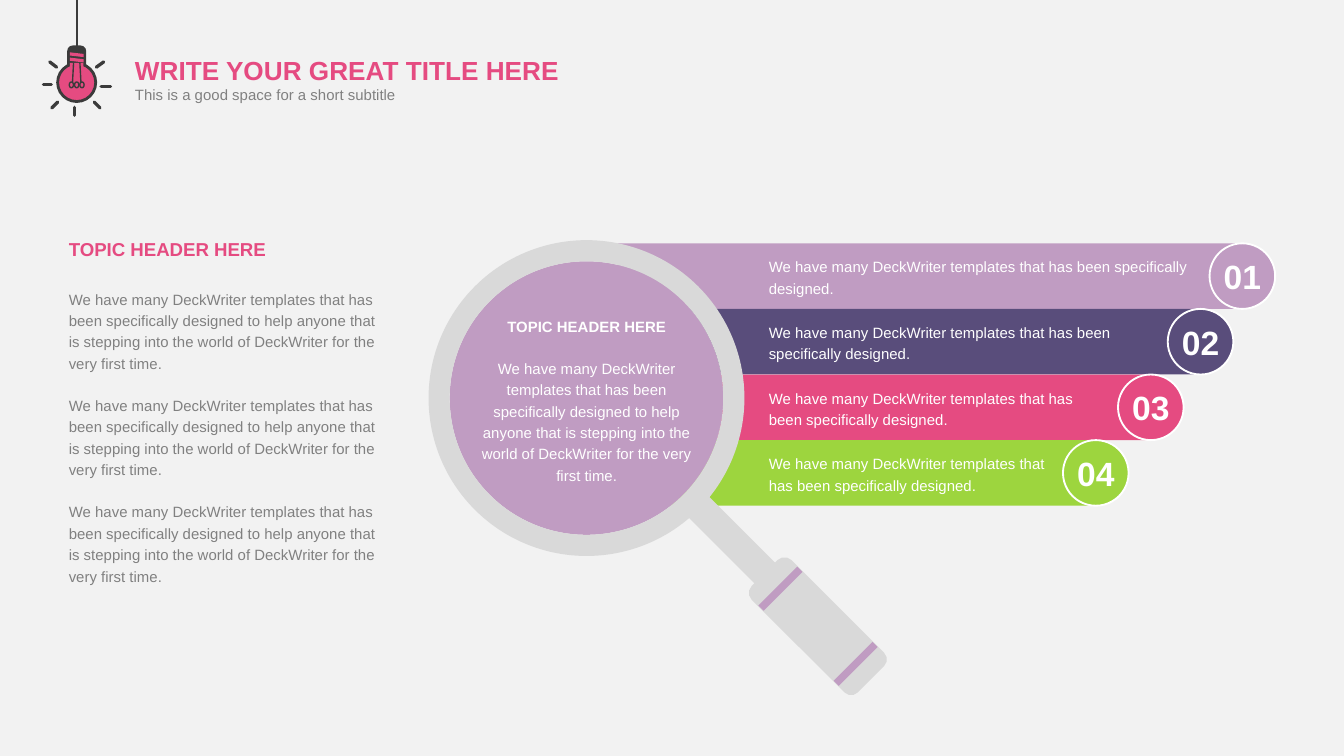
import math
import pptx
import pptx.util
import pptx.dml.color
import pptx.enum.shapes
import pptx.enum.text
import pptx.oxml.ns
from lxml import etree
from dataclasses import dataclass

Cm = pptx.util.Cm
KIND = pptx.enum.shapes.MSO_SHAPE
ALIGN = pptx.enum.text.PP_ALIGN
ANCHOR = pptx.enum.text.MSO_ANCHOR
qn = pptx.oxml.ns.qn


@dataclass(frozen=True)
class Theme:
    font: str = "Arial"
    back: str = "F2F2F2"
    pink: str = "E54B81"
    mauve: str = "C09CC2"
    navy: str = "594D7B"
    lime: str = "9DD53E"
    metal: str = "D9D9D9"
    dark: str = "3B3B3B"
    gray: str = "808080"
    white: str = "FFFFFF"
    title: float = 14
    number: float = 18
    head: float = 10
    text: float = 8


theme = Theme()
SHORT = "We have many DeckWriter templates that has been specifically designed"
LONG = (SHORT + " to help anyone that is stepping into the world of "
        "DeckWriter for the very first time.")


def rgb(code):
    return pptx.dml.color.RGBColor.from_string(code)


def apply(item, values):
    for name, value in values.items():
        setattr(item, name, value)


def place(item, x, y, w, h):
    apply(item, {"left": Cm(x), "top": Cm(y), "width": Cm(w), "height": Cm(h)})


def paint(shape, fill=None, line=None, width=1):
    shape.shadow.inherit = False
    if fill:
        shape.fill.solid()
        shape.fill.fore_color.rgb = rgb(fill)
    else:
        shape.fill.background()
    if line:
        shape.line.color.rgb = rgb(line)
        shape.line.width = pptx.util.Pt(width)
    else:
        shape.line.fill.background()
    return shape


def add(slide, kind, box, fill=None, line=None, width=1, turn=0):
    shape = slide.shapes.add_shape(kind, *map(Cm, box))
    shape.rotation = turn
    return paint(shape, fill, line, width)


def stroke(slide, x1, y1, x2, y2, width):
    line = slide.shapes.add_connector(
        pptx.enum.shapes.MSO_CONNECTOR.STRAIGHT, Cm(x1), Cm(y1), Cm(x2), Cm(y2))
    line.line.color.rgb = rgb(theme.dark)
    line.line.width = pptx.util.Pt(width)
    props = line._element.spPr
    props.find(qn("a:ln")).set("cap", "rnd")
    etree.SubElement(props, qn("a:effectLst"))


def write(shape, rows, align=ALIGN.LEFT, lead=1.2, wrap=True,
          inset=(0, 0), anchor=ANCHOR.TOP):
    """Each row holds text, size, colour, bold and space before in cm."""
    frame = shape.text_frame
    side, edge = map(Cm, inset)
    apply(frame, {"margin_left": side, "margin_right": side,
                  "margin_top": edge, "margin_bottom": edge,
                  "word_wrap": wrap, "vertical_anchor": anchor,
                  "auto_size": pptx.enum.text.MSO_AUTO_SIZE.NONE})
    for i, (text, size, color, bold, gap) in enumerate(rows):
        para = frame.add_paragraph() if i else frame.paragraphs[0]
        props = para._p.get_or_add_pPr()
        apply(para, {"alignment": align, "line_spacing": lead,
                     "space_before": Cm(gap), "space_after": Cm(0)})
        if shape.is_placeholder:
            props.set("marL", "0")
            props.set("indent", "0")
            etree.SubElement(props, qn("a:buNone"))
        run = para.add_run()
        run.text = text
        apply(run.font, {"name": theme.font, "size": pptx.util.Pt(size),
                         "bold": bold})
        run.font.color.rgb = rgb(color)


def label(slide, box, rows, **form):
    write(slide.shapes.add_textbox(*map(Cm, box)), rows, **form)


def header(slide, x, y):
    form = {"lead": 1.0, "wrap": False, "inset": (0.25, 0.13)}
    title = slide.shapes.title
    place(title, x, y, 8.59, 0.86)
    write(title, [("WRITE YOUR GREAT TITLE HERE", theme.title, theme.pink,
                   True, 0)], **form)
    label(slide, (x, y + 0.59, 5.46, 0.58),
          [("This is a good space for a short subtitle", theme.text,
            theme.gray, False, 0)], **form)


def topic(slide, x, y, w, h):
    body = slide.placeholders[1]
    place(body, x, y, w, h)
    rows = [("TOPIC HEADER HERE", theme.head, theme.pink, True, 0)]
    rows += [(LONG, theme.text, theme.gray, False, gap)
             for gap in (0.49, 0.39, 0.39)]
    write(body, rows)


def bars(slide, x, y, step):
    # Left edge, badge edge, text width, colour; edges relative to x
    rows = ((1.85, 13.03, 8.18, theme.mauve), (1.07, 12.24, 7.39, theme.navy),
            (0.13, 11.3, 6.38, theme.pink), (0, 10.26, 5.59, theme.lime))
    for i, (left, right, w, color) in enumerate(rows):
        top = y + i * step
        add(slide, KIND.RECTANGLE,
            (x + left, top, right + step / 2 - left, step), color)
        badge = add(slide, KIND.OVAL, (x + right, top, step, step),
                    color, theme.white)
        write(badge, [(f"{i + 1:02}", theme.number, theme.white, True, 0)],
              align=ALIGN.CENTER, lead=1.0, wrap=False, anchor=ANCHOR.MIDDLE)
        label(slide, (x + 4.7, top + 0.21, w, 0.81),
              [(SHORT + ".", theme.text, theme.white, False, 0)])


def glass(slide, x, y, size):
    # Lens and rim
    rim = 0.4
    inner = size - 2 * rim
    add(slide, KIND.OVAL, (x + rim, y + rim, inner, inner), theme.mauve)
    ring = add(slide, KIND.DONUT, (x, y, size, size), theme.metal)
    ring.adjustments[0] = rim / size
    # Handle parts along the diagonal: distance, length, breadth
    mid = size / 2
    parts = ((KIND.RECTANGLE, 3.83, 1.93, 0.55, theme.metal),
             (KIND.ROUNDED_RECTANGLE, 6.14, 2.84, 1.06, theme.metal),
             (KIND.RECTANGLE, 5.14, 0.14, 1.04, theme.mauve),
             (KIND.RECTANGLE, 7.15, 0.14, 1.04, theme.mauve))
    for kind, far, w, h, color in parts:
        shift = mid + far * math.cos(math.pi / 4)
        part = add(slide, kind, (x + shift + 0.03 - w / 2,
                                 y + shift - 0.03 - h / 2, w, h),
                   color, turn=45)
        if kind == KIND.ROUNDED_RECTANGLE:
            part.adjustments[0] = 0.17
    label(slide, (x + 0.96, y + 1.39, 4.06, 3.25),
          [("TOPIC HEADER HERE", theme.text, theme.white, True, 0),
           (LONG, theme.text, theme.white, False, 0.39)], align=ALIGN.CENTER)


def bulb(slide, x, y):
    # Cord, cap and globe
    stroke(slide, x + 0.66, y, x + 0.66, y + 0.9, 1)
    cap = add(slide, KIND.ROUND_2_SAME_RECTANGLE,
              (x + 0.48, y + 0.86, 0.36, 0.44), theme.dark)
    cap.adjustments[0] = 0.3
    add(slide, KIND.OVAL, (x + 0.3, y + 1.2, 0.72, 0.72),
        theme.pink, theme.dark, 1.5)
    add(slide, KIND.RECTANGLE, (x + 0.53, y + 1.19, 0.26, 0.1), theme.pink)
    # Screw thread
    for top in (0.99, 1.09):
        pen = slide.shapes.build_freeform(Cm(x + 0.53), Cm(y + top))
        pen.add_line_segments([(Cm(x + dx), Cm(y + top + dy)) for dx, dy in
                               ((0.79, 0.03), (0.79, 0.09), (0.53, 0.06))])
        paint(pen.convert_to_shape(), theme.pink)
    # Filament
    for top, low in ((0.6, 0.58), (0.72, 0.74)):
        stroke(slide, x + top, y + 1.19, x + low, y + 1.56, 0.75)
    for i in range(3):
        add(slide, KIND.OVAL, (x + 0.52 + 0.1 * i, y + 1.55, 0.08, 0.11),
            line=theme.dark, width=0.75)
    # Rays
    rays = ((1.12, 1.63, 1.3, 1.63), (0.62, 2.03, 0.62, 2.18),
            (0.03, 1.6, 0.18, 1.6), (0.15, 1.17, 0.28, 1.27),
            (1.17, 1.17, 1.03, 1.27), (0.19, 2.04, 0.3, 1.93),
            (1.1, 2.04, 0.99, 1.93))
    for x1, y1, x2, y2 in rays:
        stroke(slide, x + x1, y + y1, x + x2, y + y2, 1.75)


def main():
    deck = pptx.Presentation()
    apply(deck, {"slide_width": Cm(25.4), "slide_height": Cm(14.29)})
    slide = deck.slides.add_slide(deck.slide_layouts[1])
    slide.background.fill.solid()
    slide.background.fill.fore_color.rgb = rgb(theme.back)
    bars(slide, 9.83, 4.6, 1.24)
    glass(slide, 8.1, 4.54, 5.97)
    topic(slide, 1.3, 4.42, 5.99, 6.78)
    header(slide, 2.3, 0.89)
    bulb(slide, 0.79, 0)
    deck.save("out.pptx")


if __name__ == "__main__":
    main()
